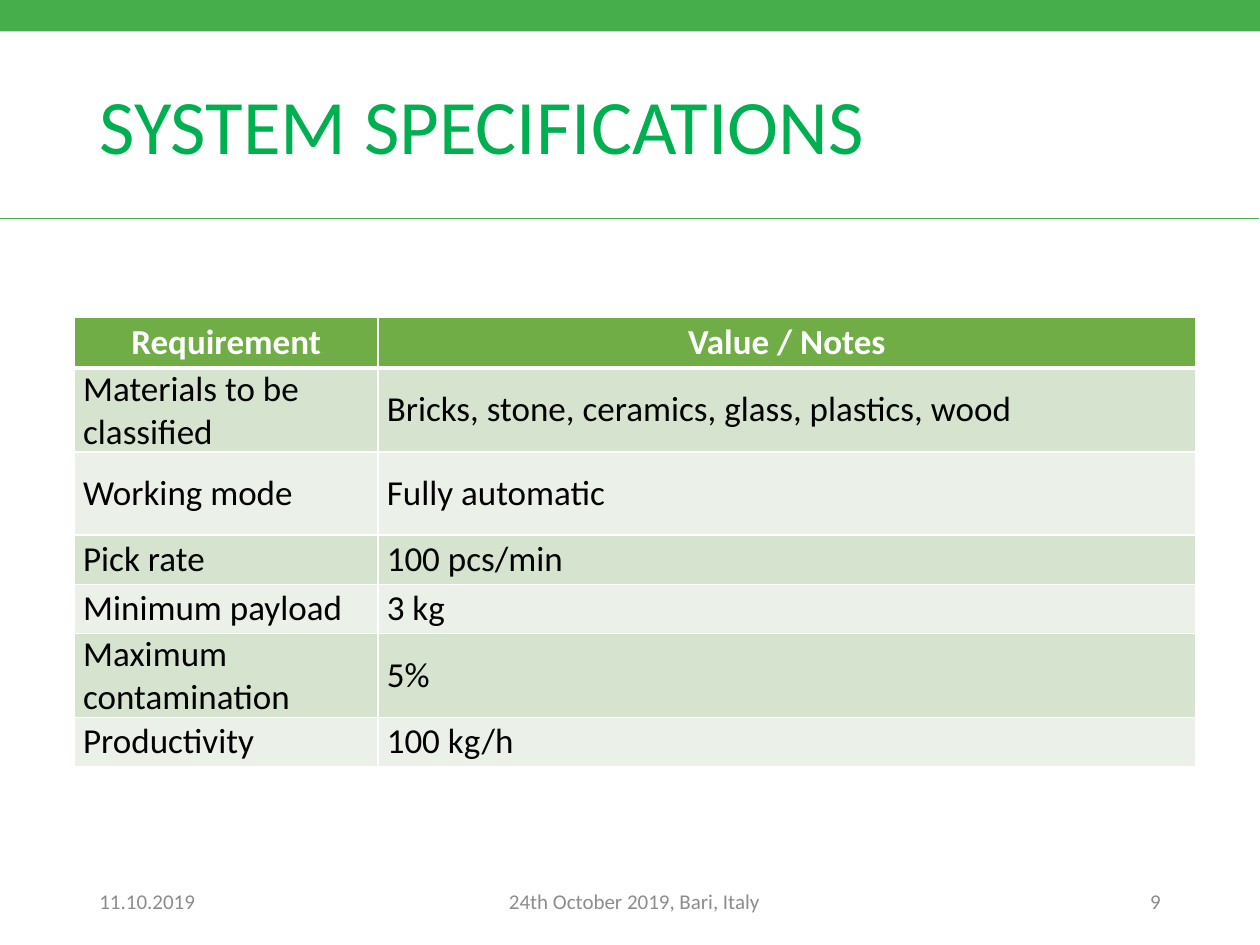
from dataclasses import dataclass

from lxml.etree import SubElement
from pptx import Presentation
from pptx.dml.color import RGBColor
from pptx.enum.shapes import MSO_CONNECTOR, MSO_SHAPE
from pptx.enum.text import MSO_ANCHOR, PP_ALIGN
from pptx.oxml.ns import qn
from pptx.slide import Slide
from pptx.table import _Cell
from pptx.text.text import _Paragraph
from pptx.util import Inches, Pt

FONT = "Calibri"
BRAND_GREEN = "47AE4C"
TITLE_GREEN = "00B050"
FOOTER_GRAY = "8C8C8C"
HEADER_GREEN = "70AD47"
BAND_COLORS = ("D5E3CF", "EBF1E9")
WHITE = "FFFFFF"
BLACK = "000000"


@dataclass(frozen=True)
class Label:
    text: str
    left: float
    top: float
    width: float
    height: float
    size: float = 12
    color: str = FOOTER_GRAY
    align: PP_ALIGN = PP_ALIGN.LEFT
    line_spacing: float = 1.0


@dataclass(frozen=True)
class Specification:
    requirement: str
    value: str
    height: float = 0.39


LABELS = (
    Label("SYSTEM SPECIFICATIONS", 0.69, 0.4, 8.62, 1.25, 44, TITLE_GREEN, line_spacing=0.9),
    Label("11.10.2019", 0.69, 6.95, 1.12, 0.4),
    Label("9", 8.33, 6.95, 0.98, 0.4, align=PP_ALIGN.RIGHT),
    Label("24th October 2019, Bari, Italy", 3.31, 6.95, 3.45, 0.4, align=PP_ALIGN.CENTER),
)

SPECIFICATIONS = (
    Specification("Requirement", "Value / Notes", 0.4),
    Specification("Materials to be classified", "Bricks, stone, ceramics, glass, plastics, wood"),
    Specification("Working mode", "Fully automatic", 0.66),
    Specification("Pick rate", "100 pcs/min"),
    Specification("Minimum payload", "3 kg"),
    Specification("Maximum contamination", "5%", 0.66),
    Specification("Productivity", "100 kg/h"),
)
COLUMN_WIDTHS = (2.41, 6.49)


def rgb(value: str) -> RGBColor:
    return RGBColor.from_string(value)


def style_paragraph(paragraph: _Paragraph, size: float, color: str,
                    align: PP_ALIGN, bold: bool = False) -> None:
    paragraph.alignment = align
    paragraph.font.name = FONT
    paragraph.font.size = Pt(size)
    paragraph.font.bold = bold
    paragraph.font.color.rgb = rgb(color)


def add_label(slide: Slide, label: Label) -> None:
    box = slide.shapes.add_textbox(Inches(label.left), Inches(label.top),
                                   Inches(label.width), Inches(label.height))
    frame = box.text_frame
    frame.word_wrap = True
    frame.vertical_anchor = MSO_ANCHOR.MIDDLE
    paragraph = frame.paragraphs[0]
    paragraph.text = label.text
    paragraph.line_spacing = label.line_spacing
    style_paragraph(paragraph, label.size, label.color, label.align)


def add_banner(slide: Slide) -> None:
    banner = slide.shapes.add_shape(MSO_SHAPE.RECTANGLE, 0, 0, Inches(10), Inches(0.25))
    banner.shadow.inherit = False
    banner.fill.solid()
    banner.fill.fore_color.rgb = rgb(BRAND_GREEN)
    banner.line.fill.background()


def add_title_rule(slide: Slide) -> None:
    rule = slide.shapes.add_connector(MSO_CONNECTOR.STRAIGHT, Inches(-0.01), Inches(1.73),
                                      Inches(9.99), Inches(1.73))
    rule.line.color.rgb = rgb(BRAND_GREEN)
    rule.line.width = Pt(0.5)
    SubElement(rule._element.spPr, qn("a:effectLst"))


def add_border(cell: _Cell, side: str, width: float) -> None:
    border = SubElement(cell._tc.get_or_add_tcPr(), qn(f"a:ln{side}"), w=str(Pt(width)))
    fill = SubElement(border, qn("a:solidFill"))
    SubElement(fill, qn("a:srgbClr"), val=WHITE)


def fill_cell(cell: _Cell, text: str, row: int) -> None:
    is_header = row == 0
    cell.vertical_anchor = MSO_ANCHOR.MIDDLE
    cell.margin_left = cell.margin_right = Inches(0.07)
    cell.margin_top = cell.margin_bottom = 0
    for side in "LRTB":
        thick = (is_header and side == "B") or (row == 1 and side == "T")
        add_border(cell, side, 3 if thick else 1)
    cell.fill.solid()
    cell.fill.fore_color.rgb = rgb(HEADER_GREEN if is_header else BAND_COLORS[(row - 1) % 2])
    paragraph = cell.text_frame.paragraphs[0]
    paragraph.text = text
    style_paragraph(paragraph, 20, WHITE if is_header else BLACK,
                    PP_ALIGN.CENTER if is_header else PP_ALIGN.LEFT, is_header)


def add_specifications(slide: Slide) -> None:
    total_height = sum(item.height for item in SPECIFICATIONS)
    table = slide.shapes.add_table(len(SPECIFICATIONS), len(COLUMN_WIDTHS),
                                   Inches(0.59), Inches(2.52),
                                   Inches(sum(COLUMN_WIDTHS)), Inches(total_height)).table
    for column, width in zip(table.columns, COLUMN_WIDTHS):
        column.width = Inches(width)
    for row, item in enumerate(SPECIFICATIONS):
        table.rows[row].height = Inches(item.height)
        for column, text in enumerate((item.requirement, item.value)):
            fill_cell(table.cell(row, column), text, row)


def main() -> None:
    presentation = Presentation()
    presentation.slide_width = Inches(10)
    presentation.slide_height = Inches(7.5)
    slide = presentation.slides.add_slide(presentation.slide_layouts[6])
    add_banner(slide)
    add_title_rule(slide)
    for label in LABELS:
        add_label(slide, label)
    add_specifications(slide)
    presentation.save("out.pptx")


if __name__ == "__main__":
    main()
